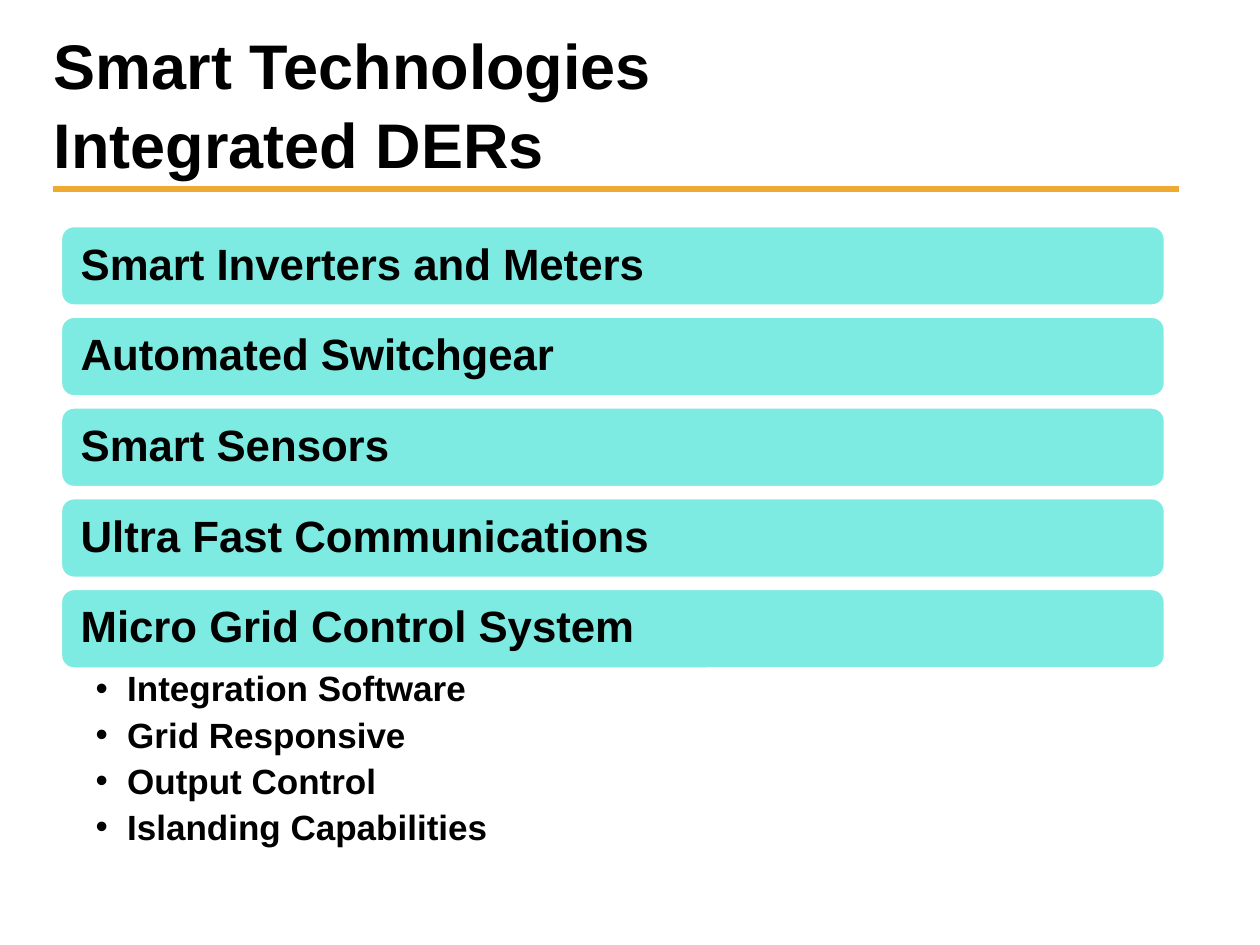
from lxml.etree import SubElement
from pptx import Presentation
from pptx.dml.color import RGBColor
from pptx.enum.shapes import MSO_CONNECTOR, MSO_SHAPE
from pptx.enum.text import MSO_ANCHOR, PP_ALIGN
from pptx.oxml.ns import qn
from pptx.util import Inches, Pt


def color(code):
    return RGBColor.from_string(code)


class Deck:
    font = "Arial"
    ink = "000000"
    bar_fill = "7DEBE1"
    bar_line = "FFFFFF"
    accent = "EFAB31"

    def __init__(self, slide):
        self.slide = slide

    def style(self, para, size, spacing):
        para.alignment = PP_ALIGN.LEFT
        para.line_spacing = spacing
        for run in para.runs:
            run.font.name = self.font
            run.font.size = Pt(size)
            run.font.bold = True
            run.font.color.rgb = color(self.ink)

    def setup(self, frame, side, edge, anchor):
        frame.word_wrap = True
        frame.margin_left = frame.margin_right = Inches(side)
        frame.margin_top = frame.margin_bottom = Inches(edge)
        frame.vertical_anchor = anchor

    def box(self, left, top, width, height):
        return self.slide.shapes.add_textbox(
            Inches(left), Inches(top), Inches(width), Inches(height)
        ).text_frame

    def title(self, text, left, top, width, height):
        frame = self.box(left, top, width, height)
        self.setup(frame, 0.1, 0.05, MSO_ANCHOR.MIDDLE)
        frame.text = text
        self.style(frame.paragraphs[0], 36, 1.05)

    def rule(self, left, right, top):
        line = self.slide.shapes.add_connector(
            MSO_CONNECTOR.STRAIGHT,
            Inches(left), Inches(top), Inches(right), Inches(top),
        )
        line.line.color.rgb = color(self.accent)
        line.line.width = Pt(4)
        SubElement(line._element.spPr, qn("a:effectLst"))

    def bar(self, text, left, top, width, height):
        shape = self.slide.shapes.add_shape(
            MSO_SHAPE.ROUNDED_RECTANGLE,
            Inches(left), Inches(top), Inches(width), Inches(height),
        )
        shape.shadow.inherit = False
        shape.fill.solid()
        shape.fill.fore_color.rgb = color(self.bar_fill)
        shape.line.color.rgb = color(self.bar_line)
        shape.line.width = Pt(2)
        frame = shape.text_frame
        self.setup(frame, 0.13, 0.1, MSO_ANCHOR.MIDDLE)
        frame.text = text
        self.style(frame.paragraphs[0], 25, 0.9)

    def bullets(self, items, left, top, width, height):
        frame = self.box(left, top, width, height)
        self.setup(frame, 0.28, 0.03, MSO_ANCHOR.TOP)
        frame.text = "\n".join(items)
        for para in frame.paragraphs:
            self.style(para, 20, 0.9)
            para.space_after = Pt(4.8)
            props = para._p.get_or_add_pPr()
            props.set("marL", str(Inches(0.25)))
            props.set("indent", str(-Inches(0.25)))
            SubElement(props, qn("a:buFont"), typeface=self.font)
            SubElement(props, qn("a:buChar"), char="•")


def main():
    show = Presentation()
    show.slide_width = Inches(10)
    show.slide_height = Inches(7.5)
    deck = Deck(show.slides.add_slide(show.slide_layouts[6]))

    deck.rule(0.42, 9.36, 1.5)
    deck.title("Smart Technologies\vIntegrated DERs", 0.33, 0.27, 7.25, 1.08)

    topics = [
        "Smart Inverters and Meters",
        "Automated Switchgear",
        "Smart Sensors",
        "Ultra Fast Communications",
        "Micro Grid Control System",
    ]
    left, top, width, height, step = 0.48, 1.79, 8.77, 0.64, 0.72
    for row, topic in enumerate(topics):
        deck.bar(topic, left, top + row * step, width, height)

    parts = [
        "Integration Software",
        "Grid Responsive",
        "Output Control",
        "Islanding Capabilities",
    ]
    deck.bullets(parts, left, 5.3, width, 1.41)
    show.save("out.pptx")


if __name__ == "__main__":
    main()
